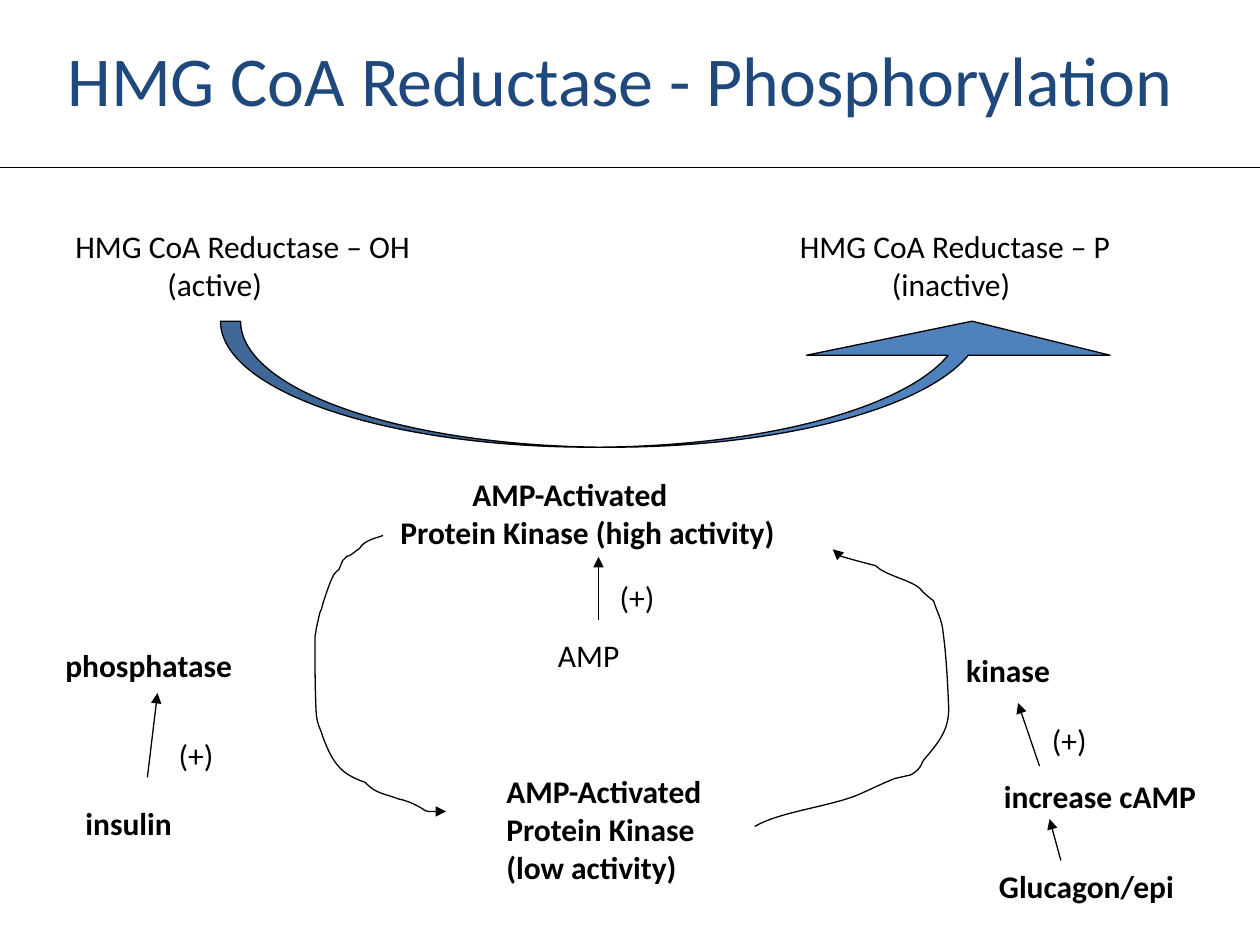
from dataclasses import dataclass
from typing import Any

import lxml.etree
import pptx
import pptx.dml.color
import pptx.enum.shapes
import pptx.enum.text
import pptx.oxml.ns
import pptx.slide
import pptx.util

EMU_PER_PX = 9144


@dataclass(frozen=True)
class Theme:
    font: str = "Calibri"
    title_size: int = 40
    body_size: int = 18
    line_width: float = 0.75
    title: str = "1F497D"
    ink: str = "000000"
    arrow: str = "4F81BD"


@dataclass(frozen=True)
class Label:
    left: int
    top: int
    width: int
    height: int
    lines: tuple[str, ...]
    bold: bool = False
    indents: tuple[int, ...] = (0, 0, 0)


@dataclass(frozen=True)
class Line:
    start: tuple[int, int]
    finish: tuple[int, int]
    arrowhead: str = "tailEnd"


@dataclass(frozen=True)
class Curve:
    points: tuple[tuple[int, int], ...]
    arrowhead: str


THEME = Theme()

LABELS = (
    Label(308, 372, 365, 70, ("AMP-Activated", "Protein Kinase (high activity)"), True, (57, 0)),
    Label(392, 608, 197, 100, ("AMP-Activated", "Protein Kinase", "(low activity)"), True),
    Label(42, 508, 174, 40, ("phosphatase",), True),
    Label(58, 633, 101, 40, ("insulin",), True),
    Label(132, 579, 51, 40, ("(+)",)),
    Label(757, 512, 98, 40, ("kinase",), True),
    Label(783, 683, 178, 40, ("Glucagon/epi",), True),
    Label(825, 567, 51, 40, ("(+)",)),
    Label(787, 612, 200, 40, ("increase cAMP",), True),
    Label(433, 500, 74, 40, ("AMP",)),
    Label(482, 454, 51, 40, ("(+)",)),
    Label(50, 175, 289, 71, ("HMG CoA Reductase – OH", "(active)"), False, (0, 73)),
    Label(625, 175, 269, 71, ("HMG CoA Reductase – P", "(inactive)"), False, (0, 73)),
)

LINES = (
    Line((0, 133), (1000, 133), ""),
    Line((117, 617), (125, 550)),
    Line((825, 608), (808, 558)),
    Line((842, 683), (833, 650)),
    Line((475, 492), (475, 442)),
)

KINASE_CURVE = Curve((
    (661, 436), (662, 438), (663, 440), (666, 441), (675, 444), (695, 449), (695, 449),
    (703, 457), (722, 460), (730, 467), (733, 471), (741, 477), (741, 477),
    (743, 484), (747, 491), (748, 498), (751, 519), (752, 540), (753, 562),
    (753, 577), (748, 586), (735, 601), (730, 606), (733, 609), (723, 615),
    (719, 616), (714, 617), (710, 618), (700, 622), (692, 626), (683, 630),
    (661, 640), (619, 644), (599, 656),
), "headEnd")

PHOSPHATASE_CURVE = Curve((
    (304, 425), (299, 427), (292, 428), (287, 433), (286, 435), (285, 436), (283, 437),
    (270, 447), (281, 436), (272, 445), (271, 447), (270, 450), (269, 452),
    (268, 453), (266, 454), (265, 456), (261, 464), (259, 471), (256, 480),
    (256, 482), (255, 484), (254, 486), (253, 490), (252, 495), (251, 499),
    (251, 501), (250, 505), (250, 505), (250, 525), (250, 546), (251, 566),
    (252, 576), (254, 577), (256, 584), (265, 609), (273, 615), (290, 621),
    (298, 630), (306, 630), (316, 634), (321, 635), (327, 637), (332, 640),
    (335, 641), (337, 644), (340, 644), (345, 644), (349, 644), (354, 644),
), "tailEnd")


def px(*values: int) -> list[int]:
    return [value * EMU_PER_PX for value in values]


def rgb(color: str) -> pptx.dml.color.RGBColor:
    return pptx.dml.color.RGBColor.from_string(color)


def set_all(target: Any, values: dict[str, Any]) -> None:
    for name, value in values.items():
        setattr(target, name, value)


def style_line(shape: Any, arrowhead: str = "") -> None:
    shape.line.width = pptx.util.Pt(THEME.line_width)
    shape.line.color.rgb = rgb(THEME.ink)
    if arrowhead:
        outline = shape.line._get_or_add_ln()
        lxml.etree.SubElement(outline, pptx.oxml.ns.qn(f"a:{arrowhead}"), type="triangle")


def add_text(slide: pptx.slide.Slide, label: Label, size: int, color: str, frame_format: dict[str, Any]) -> Any:
    box = slide.shapes.add_textbox(*px(label.left, label.top, label.width, label.height))
    frame = box.text_frame
    frame.text = "\n".join(label.lines)
    set_all(frame, frame_format)
    font_format = {"name": THEME.font, "size": pptx.util.Pt(size), "bold": label.bold}
    for paragraph, indent in zip(frame.paragraphs, label.indents):
        font = paragraph.runs[0].font
        set_all(font, font_format)
        font.color.rgb = rgb(color)
        if indent:
            paragraph._p.get_or_add_pPr().set("marL", str(indent * EMU_PER_PX))
    return box


def add_title(slide: pptx.slide.Slide) -> None:
    label = Label(42, 0, 900, 125, ("HMG CoA Reductase - Phosphorylation",))
    frame_format = {"word_wrap": True, "vertical_anchor": pptx.enum.text.MSO_ANCHOR.MIDDLE}
    box = add_text(slide, label, THEME.title_size, THEME.title, frame_format)
    box.text_frame.paragraphs[0].alignment = pptx.enum.text.PP_ALIGN.CENTER


def add_label(slide: pptx.slide.Slide, label: Label) -> None:
    frame_format = {"word_wrap": False, "auto_size": pptx.enum.text.MSO_AUTO_SIZE.SHAPE_TO_FIT_TEXT}
    add_text(slide, label, THEME.body_size, THEME.ink, frame_format)


def add_line(slide: pptx.slide.Slide, line: Line) -> None:
    connector = slide.shapes.add_connector(
        pptx.enum.shapes.MSO_CONNECTOR.STRAIGHT, *px(*line.start, *line.finish))
    style_line(connector, line.arrowhead)
    lxml.etree.SubElement(connector._element.spPr, pptx.oxml.ns.qn("a:effectLst"))


def add_curve(slide: pptx.slide.Slide, curve: Curve) -> None:
    builder = slide.shapes.build_freeform(*curve.points[0], scale=EMU_PER_PX)
    builder.add_line_segments(curve.points[1:], close=False)
    shape = builder.convert_to_shape()
    segments = list(shape._element.iter(pptx.oxml.ns.qn("a:lnTo")))
    for first, second, third in zip(segments[::3], segments[1::3], segments[2::3]):
        outline = first.getparent()
        bezier = lxml.etree.SubElement(outline, pptx.oxml.ns.qn("a:cubicBezTo"))
        for segment in (first, second, third):
            bezier.append(segment[0])
            outline.remove(segment)
    shape.fill.background()
    shape.shadow.inherit = False
    style_line(shape, curve.arrowhead)


def add_phosphorylation_arrow(slide: pptx.slide.Slide) -> None:
    shape = slide.shapes.add_shape(
        pptx.enum.shapes.MSO_SHAPE.CURVED_DOWN_ARROW, *px(175, 255, 717, 100))
    for index, value in enumerate((0.16, 2.41, 0.27)):
        shape.adjustments[index] = value
    shape._element.spPr.xfrm.set("flipV", "1")
    shape.fill.solid()
    shape.fill.fore_color.rgb = rgb(THEME.arrow)
    shape.shadow.inherit = False
    style_line(shape)


def main() -> None:
    presentation = pptx.Presentation()
    width, height = px(1000, 750)
    set_all(presentation, {"slide_width": width, "slide_height": height})
    slide = presentation.slides.add_slide(presentation.slide_layouts[6])
    add_title(slide)
    add_phosphorylation_arrow(slide)
    for curve in (KINASE_CURVE, PHOSPHATASE_CURVE):
        add_curve(slide, curve)
    for line in LINES:
        add_line(slide, line)
    for label in LABELS:
        add_label(slide, label)
    presentation.save("out.pptx")


if __name__ == "__main__":
    main()
